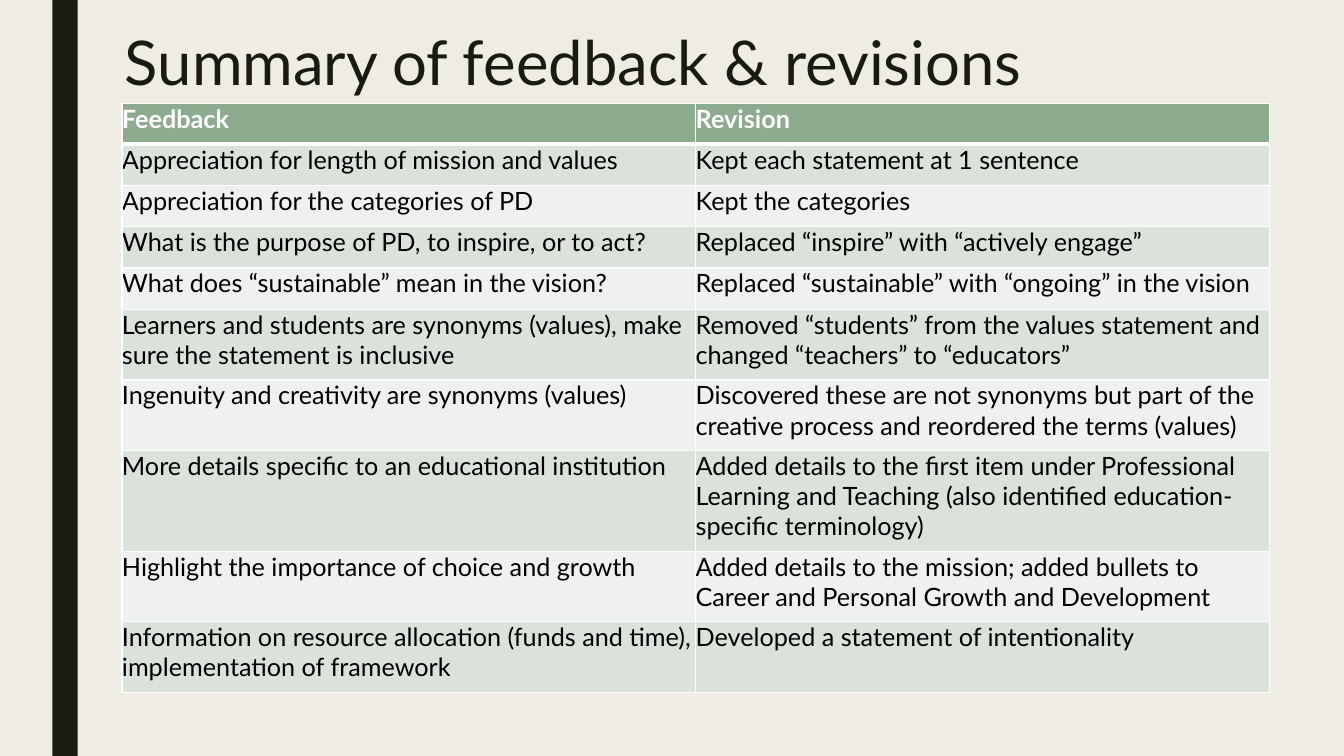
from lxml import etree
from pptx import Presentation
from pptx.dml.color import RGBColor
from pptx.enum.shapes import MSO_SHAPE as Shape
from pptx.enum.text import MSO_ANCHOR as Anchor
from pptx.oxml.ns import qn
from pptx.util import Inches, Pt

FONT = "Lato"
CREAM = RGBColor(0xEF, 0xED, 0xE3)
DARK = RGBColor(0x19, 0x1B, 0x0E)
GREEN = RGBColor(0x8D, 0xAB, 0x8E)
BAND = RGBColor(0xDB, 0xE2, 0xDB)
PALE = RGBColor(0xEE, 0xF1, 0xEE)
WHITE = RGBColor(0xFF, 0xFF, 0xFF)
BLACK = RGBColor(0, 0, 0)

TITLE = "Summary of feedback & revisions"
# Row height in inches, feedback, revision
ROWS = [
    (0.4, "Feedback", "Revision"),
    (0.41, "Appreciation for length of mission and values",
     "Kept each statement at 1 sentence"),
    (0.41, "Appreciation for the categories of PD", "Kept the categories"),
    (0.41, "What is the purpose of PD, to inspire, or to act?",
     "Replaced “inspire” with “actively engage”"),
    (0.41, "What does “sustainable” mean in the vision?",
     "Replaced “sustainable” with “ongoing” in the vision"),
    (0.7, "Learners and students are synonyms (values), make sure the statement is inclusive",
     "Removed “students” from the values statement and changed “teachers” to “educators”"),
    (0.7, "Ingenuity and creativity are synonyms (values)",
     "Discovered these are not synonyms but part of the creative process "
     "and reordered the terms (values)"),
    (1.0, "More details specific to an educational institution",
     "Added details to the first item under Professional Learning and Teaching "
     "(also identified education-specific terminology)"),
    (0.7, "Highlight the importance of choice and growth",
     "Added details to the mission; added bullets to Career and Personal Growth and Development"),
    (0.7, "Information on resource allocation (funds and time), implementation of framework",
     "Developed a statement of intentionality"),
]
COLUMN_WIDTH = 5.69


def write(frame, text, size=18, color=BLACK, bold=False, spacing=None):
    frame.word_wrap = True
    para = frame.paragraphs[0]
    if spacing:
        para.line_spacing = spacing
    span = para.add_run()
    span.text = text
    span.font.name = FONT
    span.font.size = Pt(size)
    span.font.bold = bold
    span.font.color.rgb = color


def set_borders(cell, **widths):
    """Draw white cell edges; widths in points, keyed L, R, T, B in that order."""
    properties = cell._tc.get_or_add_tcPr()
    for side, width in widths.items():
        line = etree.SubElement(properties, qn(f"a:ln{side}"), w=str(Pt(width)))
        fill = etree.SubElement(line, qn("a:solidFill"))
        etree.SubElement(fill, qn("a:srgbClr"), val=str(WHITE))


def add_feedback_table(slide):
    total = sum(height for height, *_ in ROWS)
    table = slide.shapes.add_table(
        len(ROWS), 2, Inches(1.21), Inches(1.03),
        Inches(2 * COLUMN_WIDTH), Inches(total)).table
    for column in table.columns:
        column.width = Inches(COLUMN_WIDTH)
    for index, (height, *texts) in enumerate(ROWS):
        header = index == 0
        table.rows[index].height = Inches(height)
        for cell, text in zip(table.rows[index].cells, texts):
            cell.margin_left = cell.margin_right = 0
            cell.margin_top = cell.margin_bottom = 0
            set_borders(cell, L=1, R=1, T=3 if index == 1 else 1, B=3 if header else 1)
            cell.fill.solid()
            cell.fill.fore_color.rgb = GREEN if header else BAND if index % 2 else PALE
            write(cell.text_frame, text, color=WHITE if header else BLACK, bold=header)


def main():
    deck = Presentation()
    deck.slide_width, deck.slide_height = Inches(13.33), Inches(7.5)
    slide = deck.slides.add_slide(deck.slide_layouts[6])
    slide.background.fill.solid()
    slide.background.fill.fore_color.rgb = CREAM

    stripe = slide.shapes.add_shape(
        Shape.RECTANGLE, Inches(0.52), 0, Inches(0.25), deck.slide_height)
    stripe.shadow.inherit = False
    stripe.fill.solid()
    stripe.fill.fore_color.rgb = DARK
    stripe.line.fill.background()

    box = slide.shapes.add_textbox(Inches(1.14), Inches(0.28), Inches(11.45), Inches(0.75))
    box.text_frame.vertical_anchor = Anchor.MIDDLE
    write(box.text_frame, TITLE, size=44, color=DARK, spacing=0.89)

    add_feedback_table(slide)
    deck.save("out.pptx")


if __name__ == "__main__":
    main()
